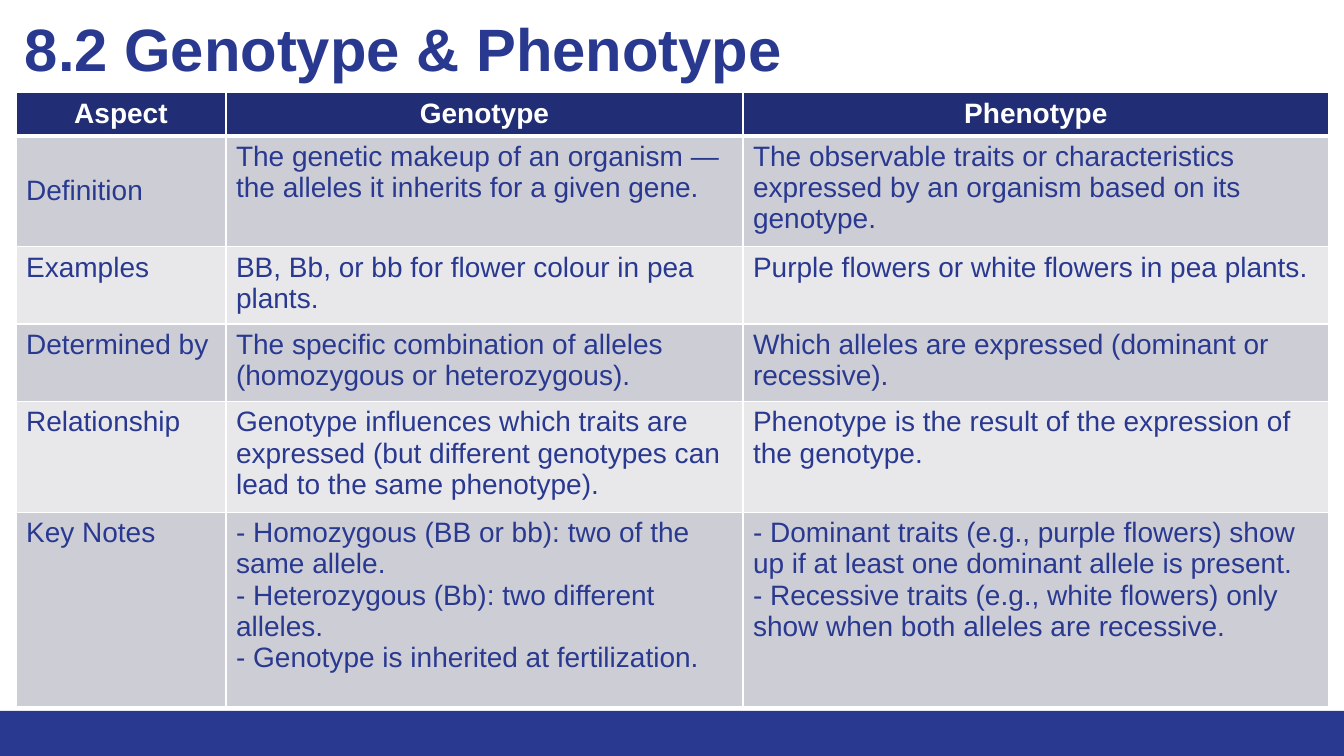
import pptx
import pptx.dml.color
import pptx.enum.shapes
import pptx.enum.text
import pptx.oxml.ns
import pptx.util
from lxml import etree

# Content
TITLE = "8.2 Genotype & Phenotype"
HEADER = ("Aspect", "Genotype", "Phenotype")
ROWS = [
    ("Definition",
     "The genetic makeup of an organism — the alleles it inherits for a given gene.",
     "The observable traits or characteristics expressed by an organism based on its genotype."),
    ("Examples",
     "BB, Bb, or bb for flower colour in pea plants.",
     "Purple flowers or white flowers in pea plants."),
    ("Determined by",
     "The specific combination of alleles (homozygous or heterozygous).",
     "Which alleles are expressed (dominant or recessive)."),
    ("Relationship",
     "Genotype influences which traits are expressed "
     "(but different genotypes can lead to the same phenotype).",
     "Phenotype is the result of the expression of the genotype."),
    ("Key Notes",
     "- Homozygous (BB or bb): two of the same allele.\n"
     "- Heterozygous (Bb): two different alleles.\n"
     "- Genotype is inherited at fertilization.",
     "- Dominant traits (e.g., purple flowers) show up if at least one dominant allele is present.\n"
     "- Recessive traits (e.g., white flowers) only show when both alleles are recessive."),
]

# Format, lengths in px
COLORS = {"blue": "2A3990", "header": "212D74", "dark band": "CDCDD6",
          "light band": "E8E8EB", "white": "FFFFFF"}
FONT = "Arial"
SLIDE_WIDTH, SLIDE_HEIGHT = 1344, 756
FOOTER_HEIGHT = 45
TABLE_LEFT, TABLE_TOP = 16, 92
COLUMN_WIDTHS = (210, 517, 586)
ROW_HEIGHTS = (42, 108, 75, 75, 108, 194)
MIDDLE = pptx.enum.text.MSO_ANCHOR.MIDDLE
TOP = pptx.enum.text.MSO_ANCHOR.TOP
CENTER = pptx.enum.text.PP_ALIGN.CENTER
LEFT = pptx.enum.text.PP_ALIGN.LEFT


def px(length):
    return pptx.util.Emu(round(length * 914400 / 100.8))


def rgb(name):
    return pptx.dml.color.RGBColor.from_string(COLORS[name])


def write(text_frame, text, size=20, color="blue", bold=False, align=LEFT, spacing=None):
    paragraph = text_frame.paragraphs[0]
    paragraph.text = text
    paragraph.alignment = align
    paragraph.line_spacing = spacing
    for run in paragraph.runs:
        run.font.name = FONT
        run.font.size = pptx.util.Pt(size)
        run.font.bold = bold
        run.font.color.rgb = rgb(color)


def set_borders(cell, bottom):
    properties = cell._tc.get_or_add_tcPr()
    widths = {"lnL": 1, "lnR": 1, "lnT": 1, "lnB": bottom}
    for position, (side, width) in enumerate(widths.items()):
        line = etree.Element(pptx.oxml.ns.qn("a:" + side), w=str(pptx.util.Pt(width)))
        fill = etree.SubElement(line, pptx.oxml.ns.qn("a:solidFill"))
        etree.SubElement(fill, pptx.oxml.ns.qn("a:srgbClr"), val=COLORS["white"])
        properties.insert(position, line)


presentation = pptx.Presentation()
presentation.slide_width = px(SLIDE_WIDTH)
presentation.slide_height = px(SLIDE_HEIGHT)
slide = presentation.slides.add_slide(presentation.slide_layouts[6])

# Footer band
footer = slide.shapes.add_shape(
    pptx.enum.shapes.MSO_SHAPE.RECTANGLE,
    px(0), px(SLIDE_HEIGHT - FOOTER_HEIGHT), px(SLIDE_WIDTH), px(FOOTER_HEIGHT))
footer.shadow.inherit = False
footer.fill.solid()
footer.fill.fore_color.rgb = rgb("blue")
footer.line.fill.background()

# Title
title = slide.shapes.add_textbox(px(15), px(-21), px(1279), px(146))
title.text_frame.word_wrap = True
title.text_frame.vertical_anchor = MIDDLE
write(title.text_frame, TITLE, size=42.7, bold=True, spacing=0.9)

# Comparison table
table = slide.shapes.add_table(
    len(ROW_HEIGHTS), len(COLUMN_WIDTHS), px(TABLE_LEFT), px(TABLE_TOP),
    px(sum(COLUMN_WIDTHS)), px(sum(ROW_HEIGHTS))).table
for column, width in zip(table.columns, COLUMN_WIDTHS):
    column.width = px(width)
for row, height in zip(table.rows, ROW_HEIGHTS):
    row.height = px(height)

for row_index, texts in enumerate([HEADER] + ROWS):
    is_header = row_index == 0
    band = "header" if is_header else ("light band", "dark band")[row_index % 2]
    for column_index, text in enumerate(texts):
        cell = table.cell(row_index, column_index)
        cell.fill.solid()
        cell.fill.fore_color.rgb = rgb(band)
        set_borders(cell, bottom=3 if is_header else 1)
        centered = is_header or text == "Definition"
        cell.vertical_anchor = MIDDLE if centered else TOP
        write(cell.text_frame, text, bold=is_header,
              color="white" if is_header else "blue",
              align=CENTER if is_header else LEFT)
        if row_index == 1:
            # The header's thick rule is shared with the row below
            top_line = cell._tc.tcPr.find(pptx.oxml.ns.qn("a:lnT"))
            top_line.set("w", str(pptx.util.Pt(3)))

presentation.save("out.pptx")
